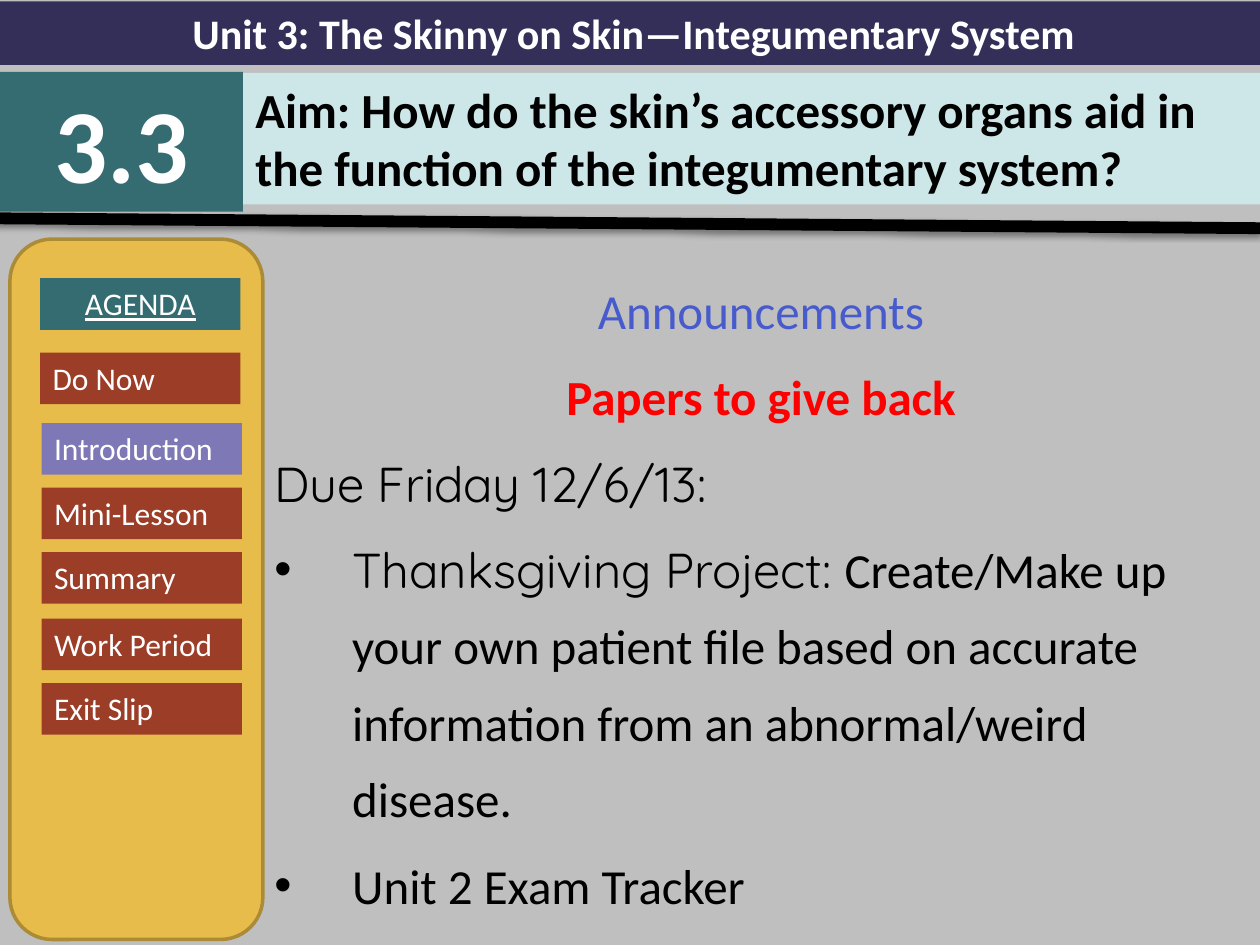
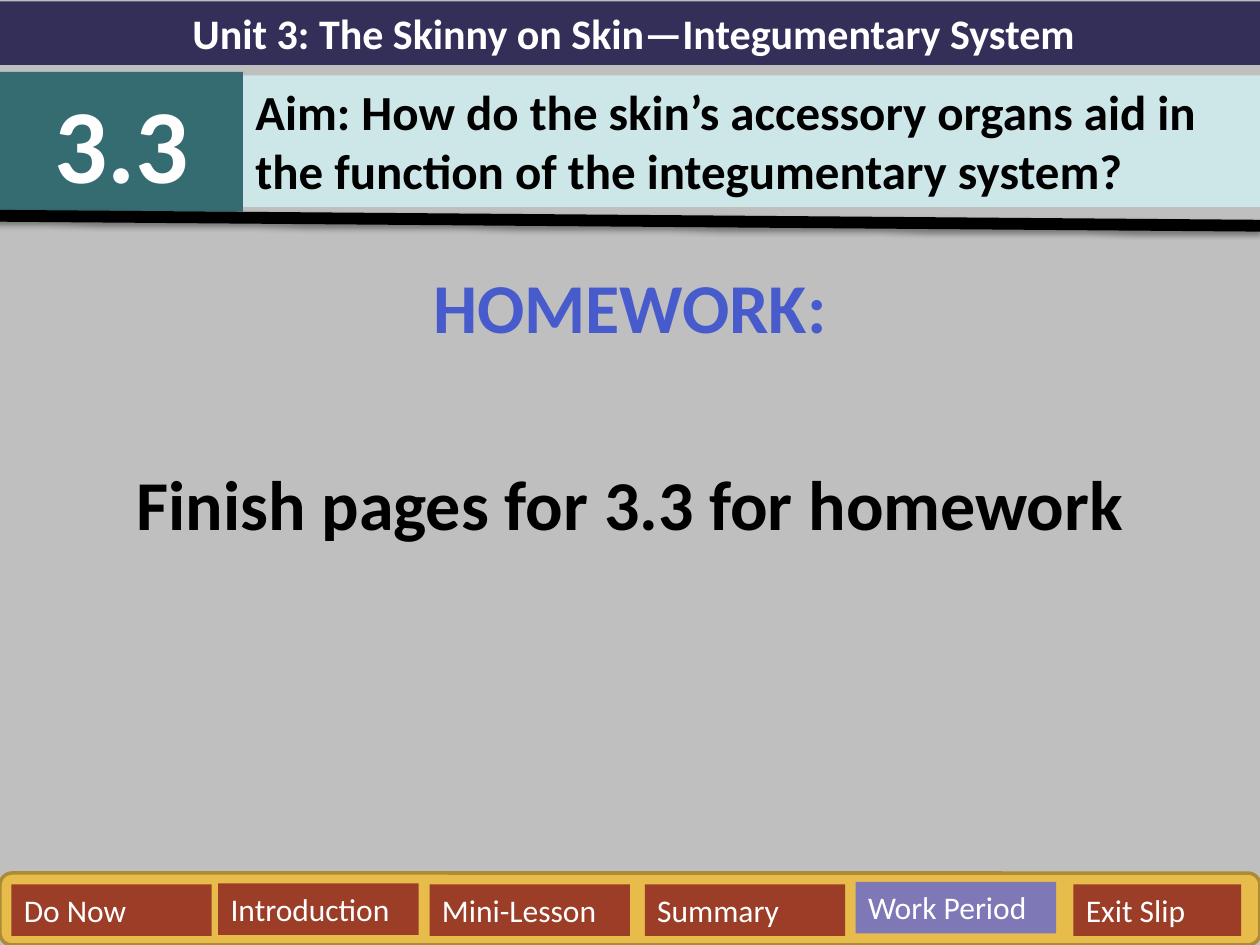
"""Build the agenda and homework slides for lesson 3.3 on the skin."""
import dataclasses
import typing

import lxml.etree
import pptx
import pptx.dml.color
import pptx.enum.shapes
import pptx.enum.text
import pptx.oxml
import pptx.oxml.ns
import pptx.shapes.group
import pptx.shapes.shapetree
import pptx.slide
import pptx.text.text
import pptx.util

Cm = pptx.util.Cm
Pt = pptx.util.Pt
RGBColor = pptx.dml.color.RGBColor
Align = pptx.enum.text.PP_ALIGN
Preset = pptx.enum.shapes.MSO_SHAPE

GREY = RGBColor(0xBF, 0xBF, 0xBF)
BLACK = RGBColor(0x00, 0x00, 0x00)
WHITE = RGBColor(0xFF, 0xFF, 0xFF)
RED = RGBColor(0xFF, 0x00, 0x00)
BLUE = RGBColor(0x47, 0x5B, 0xCD)
NAVY = RGBColor(0x34, 0x2F, 0x59)
TEAL = RGBColor(0x34, 0x6C, 0x71)
PALE_TEAL = RGBColor(0xCD, 0xE6, 0xE8)
GOLD = RGBColor(0xE8, 0xBC, 0x4A)
DARK_GOLD = RGBColor(0xAC, 0x8B, 0x37)
RUST = RGBColor(0x9C, 0x3D, 0x28)
LILAC = RGBColor(0x7E, 0x78, 0xB7)

MAIN_FONT = "Calibri"
ROUND_FONT = "Quicksand"
PAGE_WIDTH, PAGE_HEIGHT = 25.4, 19.05
BODY_TOP = 5.18
BUTTON_WIDTH = 4.04
BULLET_INDENT = 1.57
DRAWING_NS = "http://schemas.openxmlformats.org/drawingml/2006/main"
RULE_SHADOW = (
    f'<a:effectLst xmlns:a="{DRAWING_NS}">'
    '<a:outerShdw blurRad="40000" dist="20000" dir="5400000" rotWithShape="0">'
    '<a:srgbClr val="000000"><a:alpha val="38000"/></a:srgbClr>'
    '</a:outerShdw></a:effectLst>'
)


@dataclasses.dataclass(frozen=True)
class Frame:
    """Position and size in centimetres."""
    left: float
    top: float
    width: float
    height: float

    def lengths(self) -> tuple[pptx.util.Length, ...]:
        """Return left, top, width and height as lengths."""
        return Cm(self.left), Cm(self.top), Cm(self.width), Cm(self.height)


@dataclasses.dataclass(frozen=True)
class Span:
    """A piece of text in one style."""
    text: str
    size: float
    color: RGBColor = WHITE
    bold: bool = False
    underline: bool = False
    font: str = MAIN_FONT


@dataclasses.dataclass(frozen=True)
class Line:
    """A paragraph of the body text."""
    spans: tuple[Span, ...]
    align: Align = Align.CENTER
    bullet: bool = False
    space_before: float = 5.6
    spacing: float = 1.0


@dataclasses.dataclass(frozen=True)
class Button:
    """An agenda step at its place."""
    text: str
    left: float
    top: float
    width: float = BUTTON_WIDTH
    height: float = 1.04
    fill: RGBColor = RUST
    heading: bool = False


SIDEBAR_STEPS = (
    Button("AGENDA", 0.81, 5.61, fill=TEAL, heading=True),
    Button("Do Now", 0.81, 7.11),
    Button("Introduction", 0.84, 8.53, fill=LILAC),
    Button("Mini-Lesson", 0.84, 9.83),
    Button("Summary", 0.84, 11.13),
    Button("Work Period", 0.84, 12.47),
    Button("Exit Slip", 0.84, 13.77),
)
FOOTER_STEPS = (
    Button("Do Now", 0.23, 17.83),
    Button("Introduction", 4.4, 17.81),
    Button("Mini-Lesson", 8.66, 17.83),
    Button("Summary", 13, 17.83),
    Button("Work Period", 17.25, 17.78, fill=LILAC),
    Button("Exit Slip", 21.64, 17.83, width=3.38),
)
ANNOUNCEMENTS = (
    Line((Span("Announcements", 28, BLUE),), spacing=1.3),
    Line((Span("Papers to give back", 28, RED, bold=True),), spacing=1.3),
    Line((Span("Due Friday 12/6/13:", 28, BLACK, font=ROUND_FONT),),
         Align.LEFT, spacing=1.3),
    Line((Span("Thanksgiving Project: ", 28, BLACK, font=ROUND_FONT),
          Span("Create/Make up your own patient file based on accurate "
               "information from an abnormal/weird disease.", 28, BLACK)),
         Align.LEFT, bullet=True, spacing=1.3),
    Line((Span("Unit 2 Exam Tracker", 28, BLACK),),
         Align.LEFT, bullet=True, spacing=1.3),
)
HOMEWORK = (
    Line((Span("HOMEWORK:", 40, BLUE, bold=True),), space_before=8),
    Line((Span("Finish pages for 3.3 for homework", 40, BLACK, bold=True),),
         space_before=65),
)


def format_run(run: pptx.text.text._Run, span: Span) -> None:
    """Give a run the style of a span."""
    run.font.name = span.font
    run.font.size = Pt(span.size)
    run.font.bold = span.bold
    run.font.underline = span.underline
    run.font.color.rgb = span.color


def draw_box(shapes: typing.Any, frame: Frame, fill: RGBColor,
             span: typing.Optional[Span] = None, align: Align = Align.LEFT,
             preset: Preset = Preset.RECTANGLE,
             outline: typing.Optional[RGBColor] = None) -> None:
    """Draw a filled shape with optional text and outline."""
    box = shapes.add_shape(preset, *frame.lengths())
    box.shadow.inherit = False
    box.fill.solid()
    box.fill.fore_color.rgb = fill
    if outline is None:
        box.line.fill.background()
    else:
        box.line.color.rgb = outline
        box.line.width = Pt(2)
    if span is not None:
        text_frame = box.text_frame
        text_frame.text = span.text
        text_frame.word_wrap = True
        text_frame.auto_size = pptx.enum.text.MSO_AUTO_SIZE.SHAPE_TO_FIT_TEXT
        text_frame.vertical_anchor = pptx.enum.text.MSO_ANCHOR.TOP
        para = text_frame.paragraphs[0]
        para.alignment = align
        format_run(para.runs[0], span)


def draw_header(page: pptx.slide.Slide, aim_top: float, rule_top: float) -> None:
    """Draw the unit band, lesson number, aim and the sloping rule."""
    draw_box(page.shapes, Frame(0, 0.03, 25.55, 1.28), NAVY,
             Span("Unit 3: The Skinny on Skin—Integumentary System", 24, bold=True),
             Align.CENTER)
    draw_box(page.shapes, Frame(0, 1.45, 4.9, 2.82), TEAL,
             Span("3.3", 60, bold=True), Align.CENTER)
    draw_box(page.shapes, Frame(4.9, aim_top, 20.57, 2.65), PALE_TEAL,
             Span("Aim: How do the skin’s accessory organs aid in the function "
                  "of the integumentary system?", 28, BLACK, bold=True))
    rule = page.shapes.add_connector(
        pptx.enum.shapes.MSO_CONNECTOR.STRAIGHT,
        Cm(-0.13), Cm(rule_top), Cm(PAGE_WIDTH), Cm(rule_top + 0.2))
    rule.line.color.rgb = BLACK
    rule.line.width = Pt(6.75)
    rule._element.spPr.append(pptx.oxml.parse_xml(RULE_SHADOW))


def draw_body(page: pptx.slide.Slide, left: float, lines: tuple[Line, ...]) -> None:
    """Write the body text from a left edge to the page's right edge."""
    frame = Frame(left, BODY_TOP, PAGE_WIDTH - left, PAGE_HEIGHT - BODY_TOP)
    text_frame = page.shapes.add_textbox(*frame.lengths()).text_frame
    text_frame.word_wrap = True
    for index, line in enumerate(lines):
        para = text_frame.add_paragraph() if index else text_frame.paragraphs[0]
        para.alignment = line.align
        para.line_spacing = line.spacing
        para.space_before = Pt(line.space_before)
        for span in line.spans:
            run = para.add_run()
            run.text = span.text
            format_run(run, span)
        if line.bullet:
            add_bullet(para)


def add_bullet(para: pptx.text.text._Paragraph) -> None:
    """Give a paragraph a round bullet and a hanging indent."""
    properties = para._p.get_or_add_pPr()
    properties.set("marL", str(Cm(BULLET_INDENT)))
    properties.set("indent", str(-Cm(BULLET_INDENT)))
    qualified = pptx.oxml.ns.qn
    lxml.etree.SubElement(properties, qualified("a:buFont"), typeface="Arial")
    lxml.etree.SubElement(properties, qualified("a:buChar"), char="•")


def draw_agenda(page: pptx.slide.Slide, panel: Frame,
                steps: tuple[Button, ...]) -> None:
    """Draw the gold panel and its agenda steps as one group."""
    group = page.shapes.add_group_shape()
    draw_box(group.shapes, panel, GOLD, preset=Preset.ROUNDED_RECTANGLE,
             outline=DARK_GOLD)
    for step in steps:
        draw_box(group.shapes, Frame(step.left, step.top, step.width, step.height),
                 step.fill, Span(step.text, 18, underline=step.heading),
                 Align.CENTER if step.heading else Align.LEFT)


def add_page(deck: typing.Any) -> pptx.slide.Slide:
    """Add a blank grey page."""
    page = deck.slides.add_slide(deck.slide_layouts[6])
    page.background.fill.solid()
    page.background.fill.fore_color.rgb = GREY
    return page


def main() -> None:
    """Build and save the deck."""
    deck = pptx.Presentation()
    deck.slide_width, deck.slide_height = Cm(PAGE_WIDTH), Cm(PAGE_HEIGHT)

    agenda_page = add_page(deck)
    draw_body(agenda_page, 5.28, ANNOUNCEMENTS)
    draw_header(agenda_page, aim_top=1.47, rule_top=4.4)
    draw_agenda(agenda_page, Frame(0.2, 4.82, 5.1, 14.12), SIDEBAR_STEPS)

    homework_page = add_page(deck)
    draw_body(homework_page, 0, HOMEWORK)
    draw_header(homework_page, aim_top=1.52, rule_top=4.35)
    draw_agenda(homework_page, Frame(0, 17.6, PAGE_WIDTH, 1.45), FOOTER_STEPS)

    deck.save("out.pptx")


if __name__ == "__main__":
    main()
